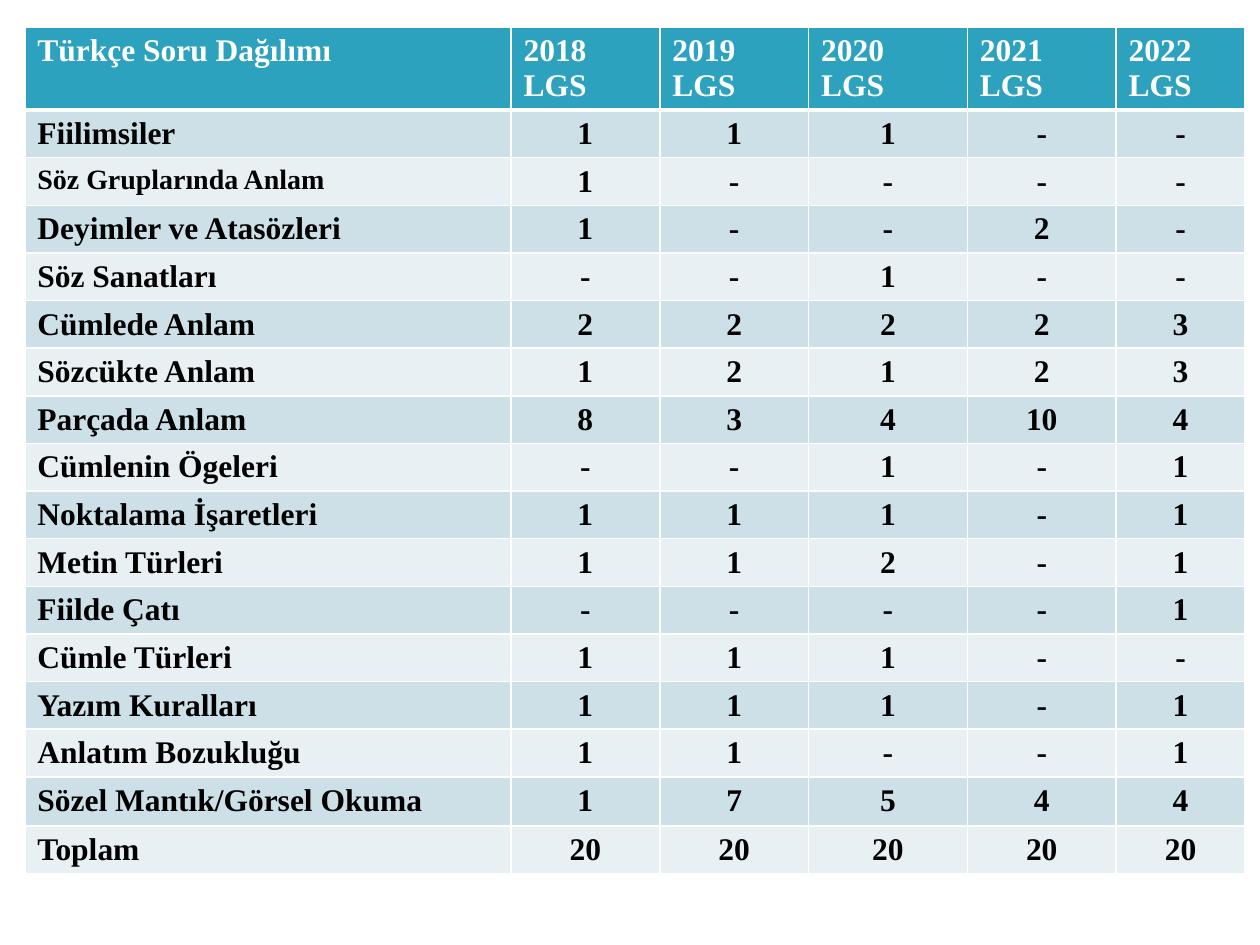
from pptx import Presentation
from pptx.dml.color import RGBColor
from pptx.enum.text import PP_ALIGN as Align
from pptx.oxml import parse_xml
from pptx.oxml.ns import nsdecls
from pptx.util import Cm, Pt

HEAD = ["Türkçe Soru Dağılımı"] + [f"{year} LGS" for year in range(2018, 2023)]
TOPICS = [
    ("Fiilimsiler", "1 1 1 - -"),
    ("Söz Gruplarında Anlam", "1 - - - -"),
    ("Deyimler ve Atasözleri", "1 - - 2 -"),
    ("Söz Sanatları", "- - 1 - -"),
    ("Cümlede Anlam", "2 2 2 2 3"),
    ("Sözcükte Anlam", "1 2 1 2 3"),
    ("Parçada Anlam", "8 3 4 10 4"),
    ("Cümlenin Ögeleri", "- - 1 - 1"),
    ("Noktalama İşaretleri", "1 1 1 - 1"),
    ("Metin Türleri", "1 1 2 - 1"),
    ("Fiilde Çatı", "- - - - 1"),
    ("Cümle Türleri", "1 1 1 - -"),
    ("Yazım Kuralları", "1 1 1 - 1"),
    ("Anlatım Bozukluğu", "1 1 - - 1"),
    ("Sözel Mantık/Görsel Okuma", "1 7 5 4 4"),
    ("Toplam", "20 20 20 20 20"),
]
SMALL = "Söz Gruplarında Anlam"
WIDTHS = [9.8, 3, 3, 3.2, 3, 2.6]
HEIGHTS = [1.68] + [0.96] * 14 + [0.99, 0.81]


def color(code):
    return RGBColor.from_string(code)


class Deck:
    """Holds the table style and the current slide."""

    font = "Times New Roman"
    white, black = "FFFFFF", "000000"
    teal, bands = "2DA2BF", ("E8F0F4", "CDE0E8")

    def __init__(self, slide):
        self.slide = slide

    def border(self, cell, side, width):
        line = parse_xml(
            f'<a:ln{side} {nsdecls("a")} w="{Pt(width)}"><a:solidFill>'
            f'<a:srgbClr val="{self.white}"/></a:solidFill></a:ln{side}>'
        )
        cell._tc.get_or_add_tcPr().append(line)

    def cell(self, cell, text, fill, ink, size, align, top, bottom):
        for side, width in zip("LRTB", (1, 1, top, bottom)):
            self.border(cell, side, width)
        cell.fill.solid()
        cell.fill.fore_color.rgb = color(fill)
        cell.text_frame.text = text
        para = cell.text_frame.paragraphs[0]
        para.alignment = align
        font = para.runs[0].font
        font.name, font.size, font.bold = self.font, Pt(size), True
        font.color.rgb = color(ink)

    def table(self, rows, widths, heights, left, top, height):
        frame = self.slide.shapes.add_table(
            len(rows), len(widths), Cm(left), Cm(top), Cm(sum(widths)), Cm(height)
        )
        grid = frame.table
        for col, width in zip(grid.columns, widths):
            col.width = Cm(width)
        for row, tall in zip(grid.rows, heights):
            row.height = Cm(tall)
        frame.height = Cm(height)
        for r, row in enumerate(rows):
            fill = self.bands[r % 2] if r else self.teal
            ink = self.black if r else self.white
            for c, text in enumerate(row):
                align = Align.CENTER if r and c else Align.LEFT
                if r == c == 0:
                    align = Align.JUSTIFY
                size = 16 if text == SMALL else 18
                self.cell(grid.cell(r, c), text, fill, ink, size, align,
                          3 if r == 1 else 1, 3 if r == 0 else 1)


def main():
    prs = Presentation()
    prs.slide_width, prs.slide_height = Cm(25.4), Cm(19.05)
    deck = Deck(prs.slides.add_slide(prs.slide_layouts[6]))
    rows = [HEAD] + [[topic] + counts.split() for topic, counts in TOPICS]
    deck.table(rows, WIDTHS, HEIGHTS, 0.5, 0.54, 18.03)
    prs.save("out.pptx")


if __name__ == "__main__":
    main()
